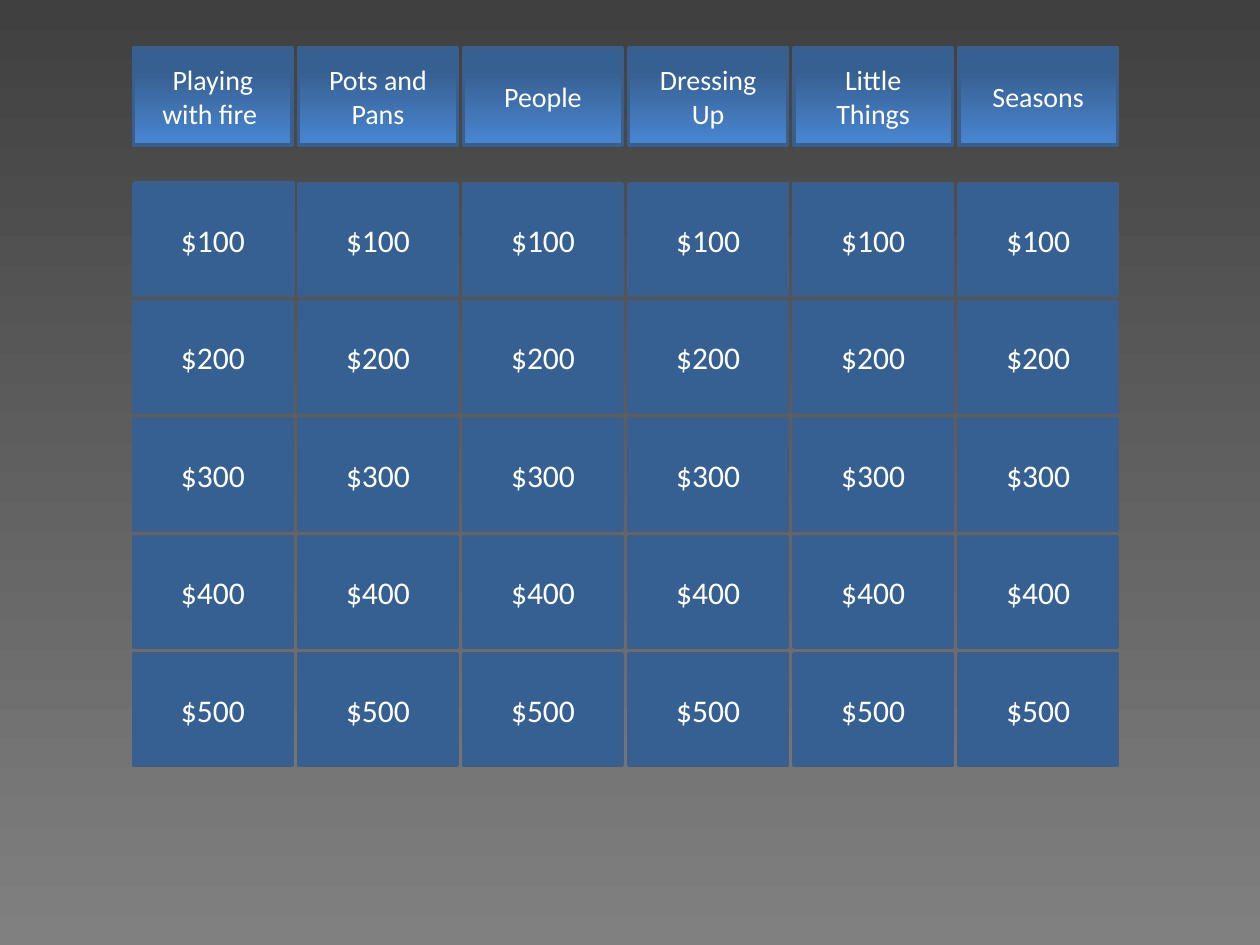
import pptx
import pptx.util
import pptx.dml.color
import pptx.enum.shapes
import pptx.enum.text
import pptx.oxml
import pptx.oxml.ns
from pptx.util import Inches

COLORS = {
    "tile": "376092",
    "glow": "4986D2",
    "edge": "3A5F8C",
    "text": "FFFFFF",
    "bg_top": "404040",
    "bg_bottom": "808080",
}
CATEGORIES = ["Playing\nwith fire ", "Pots and Pans", "People", "Dressing Up", "Little Things", "Seasons"]
AMOUNTS = ["$100", "$200", "$300", "$400", "$500"]
TILE_W, TILE_H = 1.26, 0.88


def rgb(name):
    """Return the named colour."""
    return pptx.dml.color.RGBColor.from_string(COLORS[name])


def set_gradient(fill, element, stops):
    """Give a fill a downward gradient with (percent, colour) stops."""
    fill.gradient()
    fill.gradient_angle = 270
    gs_list = element.find(".//" + pptx.oxml.ns.qn("a:gsLst"))
    for gs in list(gs_list):
        gs_list.remove(gs)
    for percent, name in stops:
        gs_list.append(pptx.oxml.parse_xml(
            f'<a:gs {pptx.oxml.ns.nsdecls("a")} pos="{percent * 1000}">'
            f'<a:srgbClr val="{COLORS[name]}"/></a:gs>'))


def add_tile(s, x, y, w, h, text="", size=18):
    """Add one board tile with centred text."""
    sp = s.shapes.add_shape(pptx.enum.shapes.MSO_SHAPE.RECTANGLE,
                            Inches(x), Inches(y), Inches(w), Inches(h))
    sp.shadow.inherit = False
    sp.fill.solid()
    sp.fill.fore_color.rgb = rgb("tile")
    sp.line.color.rgb = rgb("edge")
    sp.line.width = pptx.util.Pt(2)
    tf = sp.text_frame
    tf.word_wrap = True
    tf.vertical_anchor = pptx.enum.text.MSO_ANCHOR.MIDDLE
    tf.text = text
    for p in tf.paragraphs:
        p.alignment = pptx.enum.text.PP_ALIGN.CENTER
        p.font.name = "Calibri"
        p.font.size = pptx.util.Pt(size)
        p.font.color.rgb = rgb("text")
    return sp


def add_categories(s, x, y, w, h):
    """Add the row of category headings across the box."""
    pitch = (w - TILE_W) / (len(CATEGORIES) - 1)
    for col, category in enumerate(CATEGORIES):
        sp = add_tile(s, x + col * pitch, y, TILE_W, h, category, 16)
        set_gradient(sp.fill, sp._element, [(0, "tile"), (25, "tile"), (100, "glow")])


def add_amounts(s, x, y, w, h):
    """Add the grid of amounts, one column per category."""
    pitch_x = (w - TILE_W) / (len(CATEGORIES) - 1)
    pitch_y = (h - TILE_H) / (len(AMOUNTS) - 1)
    add_tile(s, x + 0.01, y - 0.01, TILE_W, TILE_H)
    for col in range(len(CATEGORIES)):
        for row, amount in enumerate(AMOUNTS):
            add_tile(s, x + col * pitch_x, y + row * pitch_y, TILE_W, TILE_H, amount)


def main():
    """Build the quiz board slide."""
    prs = pptx.Presentation()
    prs.slide_width, prs.slide_height = Inches(10), Inches(7.5)
    s = prs.slides.add_slide(prs.slide_layouts[6])
    set_gradient(s.background.fill, s._element, [(0, "bg_top"), (100, "bg_bottom")])
    add_categories(s, 1.06, 0.38, 7.81, 0.77)
    add_amounts(s, 1.06, 1.46, 7.81, 4.61)
    prs.save("out.pptx")


if __name__ == "__main__":
    main()
